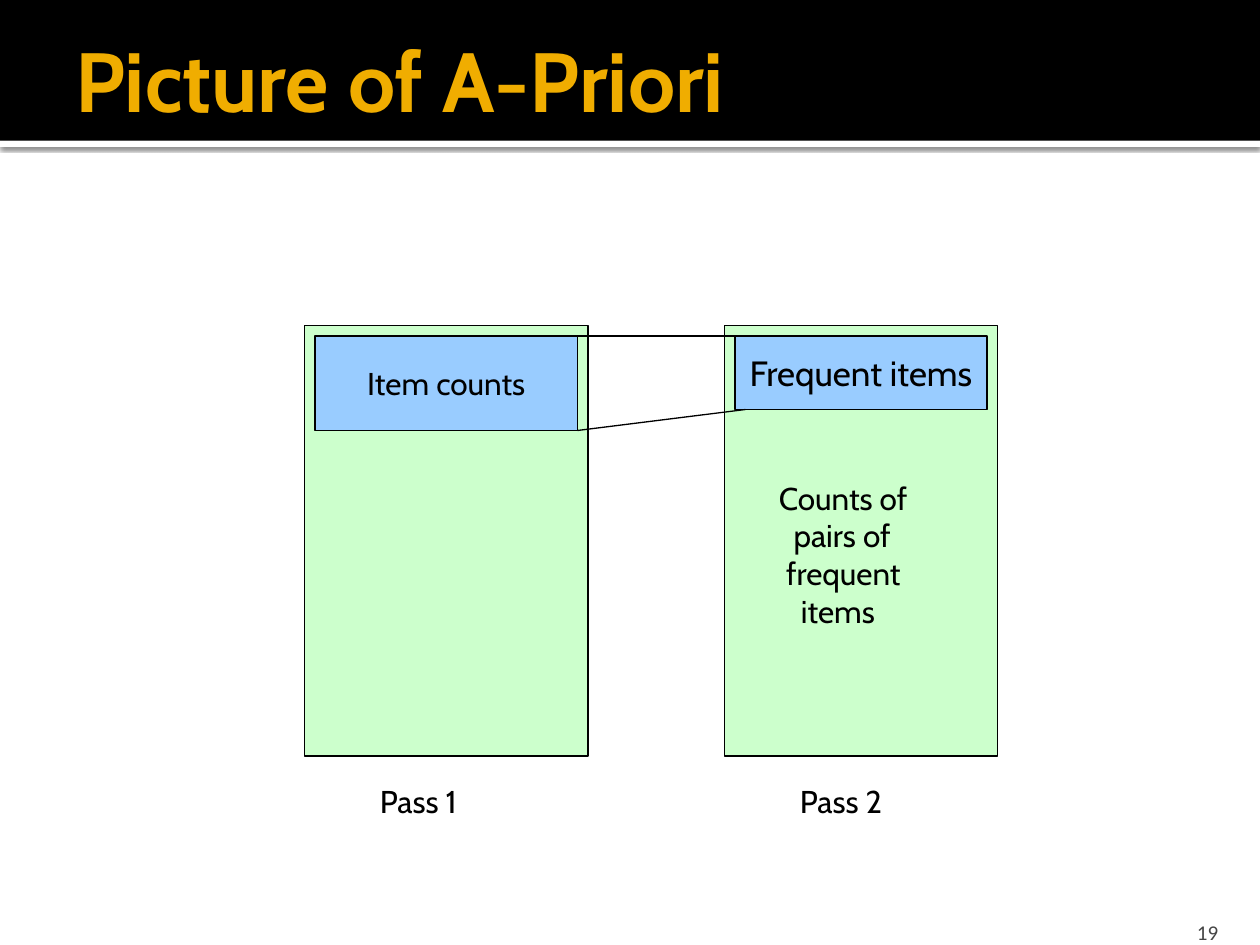
from lxml.etree import SubElement
from pptx import Presentation
from pptx.dml.color import RGBColor
from pptx.enum.shapes import MSO_CONNECTOR, MSO_SHAPE
from pptx.enum.text import MSO_ANCHOR, PP_ALIGN
from pptx.oxml import parse_xml
from pptx.oxml.ns import nsdecls, qn
from pptx.util import Pt

THEME = {
    "font": "Cabin", "plain": "Calibri",
    "black": "000000", "white": "FFFFFF", "gold": "F0AD00",
    "grey": "454545", "green": "CCFFCC", "blue": "99CCFF",
    "title": 48, "large": 20, "body": 18, "small": 12, "line": 0.75,
}
TITLE = "Picture of A-Priori"
NUMBER = "19"
PASSES = [
    {"name": "Pass 1", "left": 290, "width": 270,
     "item": "Item counts", "size": "body", "height": 90},
    {"name": "Pass 2", "left": 690, "width": 260,
     "item": "Frequent items", "size": "large", "height": 70},
]
PAIRS = [("Counts of", 0), ("pairs of", 2), ("frequent", 1), ("items", 3)]

SCALE = 7620
WIDE, HIGH = 1200, 900
TOP, TALL, GAP = 310, 410, 10
STEP = 7


def px(*nums):
    return [num * SCALE for num in nums]


def color(name):
    return RGBColor.from_string(THEME[name])


def write(shape, text, size, ink="black", font="font", bold=False,
          align=PP_ALIGN.LEFT, anchor=MSO_ANCHOR.TOP, wrap=False):
    frame = shape.text_frame
    frame.text = text
    frame.word_wrap = wrap
    frame.vertical_anchor = anchor
    for para in frame.paragraphs:
        para.alignment = align
        for run in para.runs:
            run.font.name = THEME[font]
            run.font.size = Pt(THEME[size])
            run.font.bold = bold
            run.font.color.rgb = color(ink)
    return frame


def label(slide, box, text, size, **style):
    return write(slide.shapes.add_textbox(*px(*box)), text, size, **style)


def block(slide, box, fill, edge=True):
    shape = slide.shapes.add_shape(MSO_SHAPE.RECTANGLE, *px(*box))
    shape.shadow.inherit = False
    shape.fill.solid()
    shape.fill.fore_color.rgb = color(fill)
    if edge:
        shape.line.color.rgb = color("black")
        shape.line.width = Pt(THEME["line"])
    else:
        shape.line.fill.background()
    return shape


def link(slide, start, end):
    line = slide.shapes.add_connector(
        MSO_CONNECTOR.STRAIGHT, *px(*start, *end))
    line.line.color.rgb = color("black")
    line.line.width = Pt(THEME["line"])
    SubElement(line._element.spPr, qn("a:effectLst"))


def header(slide):
    strip = block(slide, (0, 134, WIDE, 6), "white", edge=False)
    glow = strip._element.spPr.find(qn("a:effectLst"))
    glow.append(parse_xml(
        f'<a:outerShdw {nsdecls("a")} blurRad="{Pt(2.5)}" dist="{Pt(0.8)}" '
        f'dir="5400000" rotWithShape="0"><a:srgbClr val="{THEME["black"]}">'
        '<a:alpha val="60000"/></a:srgbClr></a:outerShdw>'))
    block(slide, (0, 0, WIDE, 134), "black", edge=False)
    frame = label(slide, (1076, 864, 96, 36), NUMBER, "small", ink="grey",
                  font="plain", align=PP_ALIGN.RIGHT,
                  anchor=MSO_ANCHOR.BOTTOM, wrap=True)
    frame.margin_bottom = 0
    frame = label(slide, (60, 20, 1140, 110), TITLE, "title", ink="gold",
                  bold=True, anchor=MSO_ANCHOR.MIDDLE, wrap=True)
    frame.margin_right = px(6)[0]


def diagram(slide):
    for part in PASSES:
        block(slide, (part["left"], TOP, part["width"], TALL), "green")
    for part in PASSES:
        left, wide = part["left"], part["width"]
        box = left + GAP, TOP + GAP, wide - 2 * GAP, part["height"]
        write(block(slide, box, "blue"), part["item"], part["size"],
              align=PP_ALIGN.CENTER, anchor=MSO_ANCHOR.MIDDLE)
        label(slide, (left + 60, 739, 138, 60), part["name"], "body")

    first, second = PASSES
    near = first["left"] + first["width"] - GAP
    far = second["left"] + GAP
    top = TOP + GAP
    link(slide, (near, top + first["height"]),
         (far + GAP, top + second["height"]))
    link(slide, (near, top), (far, top))

    text = "\n".join(line for line, _ in PAIRS)
    frame = label(slide, (730, 450, 192, 204), text, "body")
    for para, (_, level) in zip(frame.paragraphs, PAIRS):
        para._p.get_or_add_pPr().set("marL", str(px(level * STEP)[0]))


def main():
    deck = Presentation()
    deck.slide_width, deck.slide_height = px(WIDE, HIGH)
    slide = deck.slides.add_slide(deck.slide_layouts[6])
    header(slide)
    diagram(slide)
    deck.save("out.pptx")


if __name__ == "__main__":
    main()
